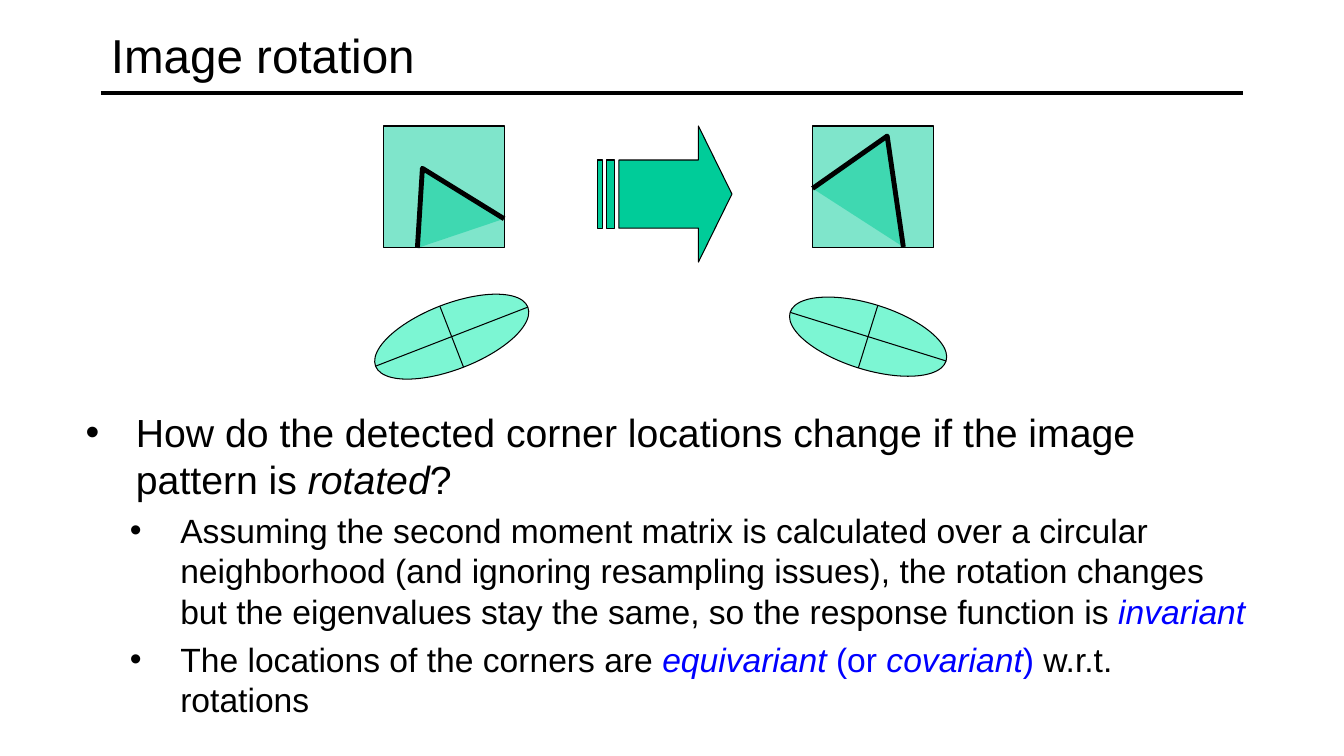
from math import cos, radians, sin

from lxml.etree import SubElement
from pptx import Presentation
from pptx.dml.color import RGBColor
from pptx.enum.shapes import MSO_CONNECTOR, MSO_SHAPE
from pptx.enum.text import MSO_ANCHOR, MSO_AUTO_SIZE, PP_ALIGN
from pptx.oxml.ns import qn
from pptx.util import Pt

PX = 9144
FONT = "Arial"
BLACK = RGBColor(0, 0, 0)
BLUE = RGBColor(0, 0, 255)
GREEN = RGBColor(0x00, 0xCC, 0x99)
MINT = RGBColor(0x7C, 0xF6, 0xD3)

TITLE = "Image rotation"
TITLE_BOX = (100, 8, 1133, 92)
RULE = (100, 92, 1233, 92)
BODY_BOX = (75, 400, 1175, 283)
ARROW_BOX = (593, 125, 133, 135)
PATCHES = [
    ((380, 125, 120, 121), [(414, 246), (419, 167), (500, 217)]),
    ((806, 125, 120, 121), [(806, 187), (880, 135), (896, 245)]),
]
ELLIPSE_SIZE = (162, 65)
ELLIPSES = [((448, 334), -21.2), ((861, 334), 17.3)]

LEVELS = [(28, 50), (24, 94)]
HANGING = 50
BULLETS = [
    (0, [
        ("How do the detected corner locations change if the image pattern is ", BLACK, False),
        ("rotated", BLACK, True),
        ("?", BLACK, False),
    ]),
    (1, [
        ("Assuming the second moment matrix is calculated over a circular neighborhood "
         "(and ignoring resampling issues), the rotation changes but the eigenvalues stay "
         "the same, so the response function is ", BLACK, False),
        ("invariant", BLUE, True),
    ]),
    (1, [
        ("The locations of the corners are ", BLACK, False),
        ("equivariant", BLUE, True),
        (" (or ", BLUE, False),
        ("covariant", BLUE, True),
        (") ", BLUE, False),
        ("w.r.t. rotations", BLACK, False),
    ]),
]


def emu(lengths):
    return [round(length * PX) for length in lengths]


def style(shape, color, width=0.75, opacity=None):
    shape.shadow.inherit = False
    shape.fill.solid()
    shape.fill.fore_color.rgb = color
    shape.line.color.rgb = BLACK
    shape.line.width = Pt(width)
    if opacity:
        solid = shape.fill._xPr.find(qn("a:solidFill"))
        SubElement(solid[0], qn("a:alpha")).set("val", str(opacity * 1000))


def add_line(shapes, ends, width=0.75):
    line = shapes.add_connector(MSO_CONNECTOR.STRAIGHT, *emu(ends))
    line.line.color.rgb = BLACK
    line.line.width = Pt(width)
    SubElement(line._element.spPr, qn("a:effectLst"))


def add_patch(slide, window, corner):
    shapes = slide.shapes.add_group_shape().shapes
    style(shapes.add_shape(MSO_SHAPE.RECTANGLE, *emu(window)), GREEN, opacity=50)
    outline = shapes.build_freeform(*corner[0], scale=PX)
    outline.add_line_segments(corner[1:], close=False)
    style(outline.convert_to_shape(), GREEN, 3.5, 50)


def add_ellipse(slide, center, angle):
    shapes = slide.shapes.add_group_shape().shapes
    x, y = center
    width, height = ELLIPSE_SIZE
    box = (x - width / 2, y - height / 2, width, height)
    ellipse = shapes.add_shape(MSO_SHAPE.OVAL, *emu(box))
    ellipse.rotation = angle
    style(ellipse, MINT)
    for length, turn in ((width, angle), (height, angle + 90)):
        dx = length / 2 * cos(radians(turn))
        dy = length / 2 * sin(radians(turn))
        add_line(shapes, (x - dx, y - dy, x + dx, y + dy))


def format_run(run, size, color, italic=False):
    run.font.name = FONT
    run.font.size = Pt(size)
    run.font.color.rgb = color
    run.font.italic = italic


def add_title(slide):
    title = slide.shapes.title
    title.left, title.top, title.width, title.height = emu(TITLE_BOX)
    frame = title.text_frame
    frame.text = TITLE
    frame.auto_size = MSO_AUTO_SIZE.NONE
    frame.vertical_anchor = MSO_ANCHOR.MIDDLE
    frame.paragraphs[0].alignment = PP_ALIGN.LEFT
    format_run(frame.paragraphs[0].runs[0], 34, BLACK)


def add_bullets(slide):
    frame = slide.shapes.add_textbox(*emu(BODY_BOX)).text_frame
    frame.word_wrap = True
    for index, (level, pieces) in enumerate(BULLETS):
        paragraph = frame.add_paragraph() if index else frame.paragraphs[0]
        size, indent = LEVELS[level]
        paragraph.level = level
        paragraph.space_before = Pt(round(size * 0.23, 1))
        properties = paragraph._p.get_or_add_pPr()
        properties.set("marL", str(indent * PX))
        properties.set("indent", str(-HANGING * PX))
        SubElement(properties, qn("a:buFont")).set("typeface", FONT)
        SubElement(properties, qn("a:buChar")).set("char", "•")
        for text, color, italic in pieces:
            run = paragraph.add_run()
            run.text = text
            format_run(run, size, color, italic)


def main():
    deck = Presentation()
    deck.slide_width, deck.slide_height = emu((1333, 750))
    slide = deck.slides.add_slide(deck.slide_layouts[5])
    add_title(slide)
    add_line(slide.shapes, RULE, 3)
    for window, corner in PATCHES:
        add_patch(slide, window, corner)
    arrow = slide.shapes.add_shape(MSO_SHAPE.STRIPED_RIGHT_ARROW, *emu(ARROW_BOX))
    arrow.adjustments[0] = 0.5
    arrow.adjustments[1] = 0.25
    style(arrow, GREEN)
    for center, angle in ELLIPSES:
        add_ellipse(slide, center, angle)
    add_bullets(slide)
    deck.save("out.pptx")


if __name__ == "__main__":
    main()
